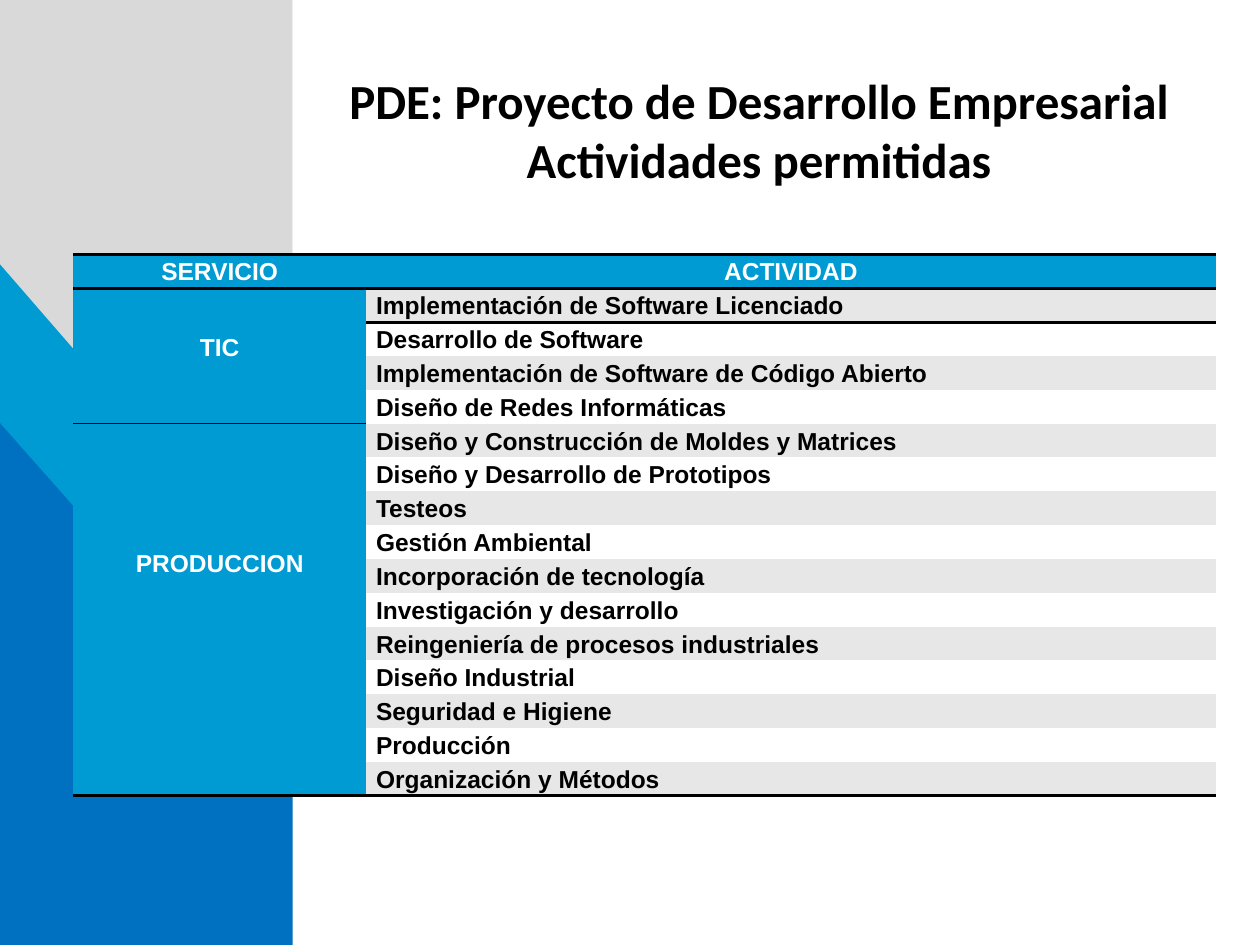
import lxml.etree
import pptx
import pptx.dml.color
import pptx.enum.shapes
import pptx.enum.text
import pptx.oxml.ns
import pptx.util

Cm = pptx.util.Cm
Pt = pptx.util.Pt
RGB = pptx.dml.color.RGBColor.from_string
SHAPE = pptx.enum.shapes.MSO_SHAPE
ALIGN = pptx.enum.text.PP_ALIGN
ANCHOR = pptx.enum.text.MSO_ANCHOR
qn = pptx.oxml.ns.qn

HEADING = "PDE: Proyecto de Desarrollo Empresarial\vActividades permitidas"
COLUMNS = ["SERVICIO", "ACTIVIDAD"]
SERVICES = [
    ("TIC", 0.85, [
        "Implementación de Software Licenciado",
        "Desarrollo de Software",
        "Implementación de Software de Código Abierto",
        "Diseño de Redes Informáticas",
    ]),
    ("PRODUCCION", 2.46, [
        "Diseño y Construcción de Moldes y Matrices",
        "Diseño y Desarrollo de Prototipos",
        "Testeos",
        "Gestión Ambiental",
        "Incorporación de tecnología",
        "Investigación y desarrollo",
        "Reingeniería de procesos industriales",
        "Diseño Industrial",
        "Seguridad e Higiene",
        "Producción",
        "Organización y Métodos",
    ]),
]

THEME = {
    "black": "000000", "white": "FFFFFF", "grey": "D9D9D9", "band": "E7E7E7",
    "cyan": "009BD2", "blue": "0070C0",
    "heading": {"name": "Calibri", "size": Pt(28), "bold": True},
    "cell": {"name": "Arial", "size": Pt(14), "bold": True},
    "thick": 2, "thin": 1,
    "no_style": "{2D5ABB26-0587-4C30-8999-92F81FD0307C}",
}

SLIDE_W, SLIDE_H = 25.4, 19.05
SIDEBAR_W = 5.9
BACKDROP = [
    (SHAPE.RECTANGLE, 0, 0, SIDEBAR_W, "grey"),
    (SHAPE.RIGHT_TRIANGLE, 0, 5.33, 11.91, "cyan"),
    (SHAPE.RIGHT_TRIANGLE, 0, 8.53, 9.3, "blue"),
    (SHAPE.RECTANGLE, SIDEBAR_W, 0, SLIDE_W - SIDEBAR_W, "white"),
]
HEADING_BOX = {"left": Cm(6.3), "top": Cm(1.93), "width": Cm(18), "height": Cm(2)}
TABLE_LEFT, TABLE_TOP, TABLE_H = 1.48, 5.13, 10.92
COLUMN_WIDTHS = [5.9, 17.13]


def apply(target, values):
    for key, value in values.items():
        setattr(target, key, value)


def style_font(font, style, color):
    apply(font, THEME[style])
    font.color.rgb = RGB(THEME[color])


def add_backdrop(slide):
    for preset, left, top, width, color in BACKDROP:
        panel = slide.shapes.add_shape(
            preset, Cm(left), Cm(top), Cm(width), Cm(SLIDE_H - top))
        panel.shadow.inherit = False
        panel.fill.solid()
        panel.fill.fore_color.rgb = RGB(THEME[color])
        panel.line.fill.background()


def add_heading(slide):
    heading = slide.shapes.title
    heading.element.getparent().append(heading.element)
    apply(heading, HEADING_BOX)
    frame = heading.text_frame
    frame.text = HEADING
    apply(frame, {"word_wrap": True, "vertical_anchor": ANCHOR.BOTTOM,
                  "auto_size": pptx.enum.text.MSO_AUTO_SIZE.NONE})
    paragraph = frame.paragraphs[0]
    paragraph.alignment = ALIGN.CENTER
    for run in paragraph.runs:
        style_font(run.font, "heading", "black")


def fill_cell(cell, text, fill, color, align, top=0):
    cell.text = text
    apply(cell, {"margin_left": Cm(0.2), "margin_right": Cm(0.2),
                 "margin_top": Cm(top), "margin_bottom": 0,
                 "vertical_anchor": ANCHOR.TOP})
    cell.fill.solid()
    cell.fill.fore_color.rgb = RGB(THEME[fill])
    paragraph = cell.text_frame.paragraphs[0]
    apply(paragraph, {"alignment": align, "line_spacing": 1.15, "space_before": Pt(5)})
    style_font(paragraph.font, "cell", color)
    for run in paragraph.runs:
        style_font(run.font, "cell", color)


def rule_cell(cell, **edges):
    properties = cell._tc.get_or_add_tcPr()
    for position, (edge, weight) in enumerate(edges.items()):
        line = lxml.etree.Element(qn("a:ln" + edge), w=str(Pt(THEME[weight])))
        solid = lxml.etree.SubElement(line, qn("a:solidFill"))
        lxml.etree.SubElement(solid, qn("a:srgbClr"), val=THEME["black"])
        properties.insert(position, line)


def add_services(slide):
    row_count = 1 + sum(len(activities) for _, _, activities in SERVICES)
    frame = slide.shapes.add_table(
        row_count, len(COLUMNS), Cm(TABLE_LEFT), Cm(TABLE_TOP),
        Cm(sum(COLUMN_WIDTHS)), Cm(TABLE_H))
    next(frame.element.iter(qn("a:tableStyleId"))).text = THEME["no_style"]
    table = frame.table
    for column, width in zip(table.columns, COLUMN_WIDTHS):
        column.width = Cm(width)
    for row in table.rows:
        row.height = Cm(TABLE_H / row_count)

    for index, label in enumerate(COLUMNS):
        fill_cell(table.cell(0, index), label, "cyan", "white", ALIGN.CENTER)
        rule_cell(table.cell(0, index), T="thick", B="thick")

    first = 1
    for service, drop, activities in SERVICES:
        last = first + len(activities) - 1
        table.cell(first, 0).merge(table.cell(last, 0))
        fill_cell(table.cell(first, 0), service, "cyan", "white", ALIGN.CENTER, drop)
        above = "thick" if first == 1 else "thin"
        below = "thick" if last == row_count - 1 else "thin"
        rule_cell(table.cell(first, 0), T=above, B=below)
        rule_cell(table.cell(last, 0), B=below)
        for row, activity in enumerate(activities, first):
            fill = "band" if row % 2 else "white"
            fill_cell(table.cell(row, 1), activity, fill, "black", ALIGN.JUSTIFY)
        first = last + 1
    rule_cell(table.cell(1, 1), T="thick")
    rule_cell(table.cell(row_count - 1, 1), B="thick")


def main():
    deck = pptx.Presentation()
    apply(deck, {"slide_width": Cm(SLIDE_W), "slide_height": Cm(SLIDE_H)})
    slide = deck.slides.add_slide(deck.slide_layouts[5])
    add_backdrop(slide)
    add_heading(slide)
    add_services(slide)
    deck.save("out.pptx")


if __name__ == "__main__":
    main()
